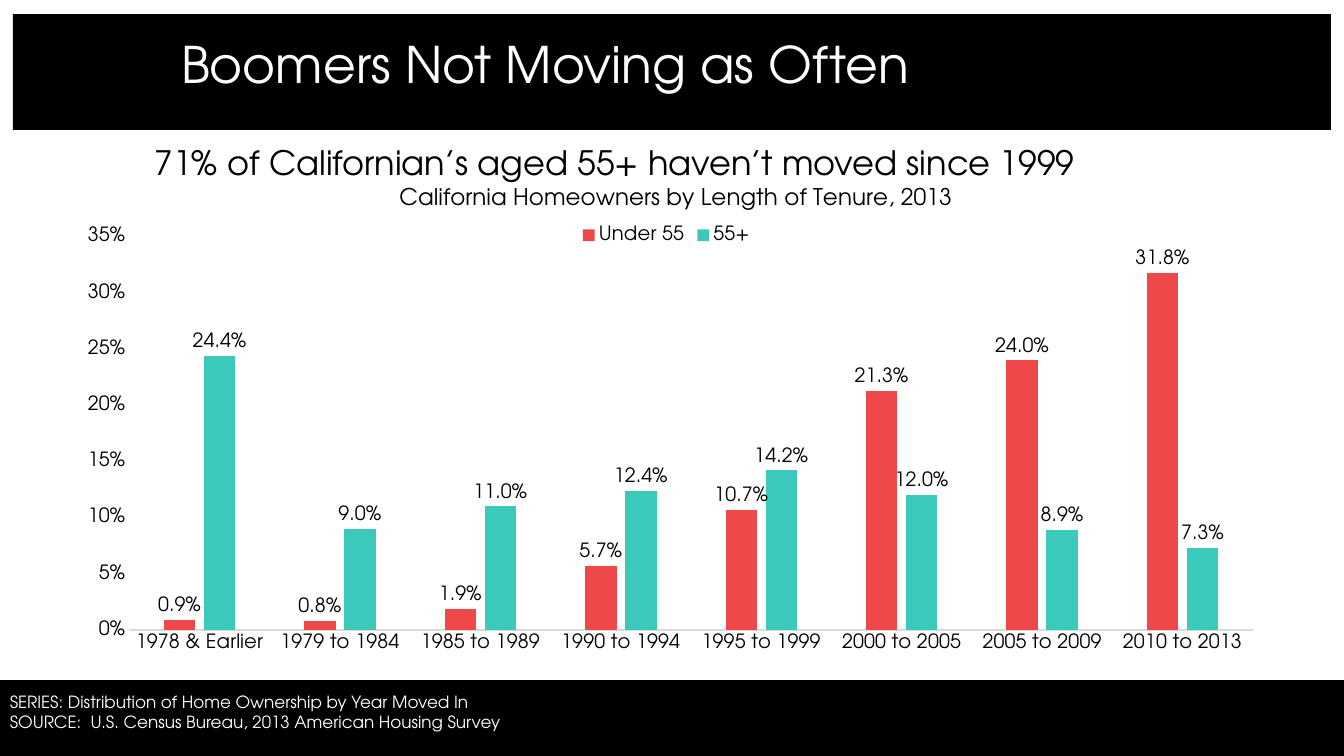
"""Build the slide on home-ownership tenure by age group."""
from lxml import etree
from pptx import Presentation
from pptx import util as u
from pptx.chart import data as chart_data
from pptx.dml import color
from pptx.enum import chart as ch
from pptx.enum import shapes, text
from pptx.oxml import ns

PX = 914400 / 100.8


def px(*lengths):
    return [u.Emu(round(length * PX)) for length in lengths]


def rgb(value):
    return color.RGBColor.from_string(value)


def apply(target, **values):
    for name, value in values.items():
        setattr(target, name, value)


def place(node, **fractions):
    for old in node.findall(ns.qn("c:layout")):
        node.remove(old)
    layout = etree.Element(ns.qn("c:layout"))
    manual = etree.SubElement(layout, ns.qn("c:manualLayout"))
    if "w" in fractions:
        etree.SubElement(manual, ns.qn("c:layoutTarget"), val="inner")
    for mode in ("xMode", "yMode"):
        etree.SubElement(manual, ns.qn(f"c:{mode}"), val="edge")
    for name, value in fractions.items():
        etree.SubElement(manual, ns.qn(f"c:{name}"), val=str(value))
    overlay = node.find(ns.qn("c:overlay"))
    if overlay is None:
        node.insert(0, layout)
    else:
        overlay.addprevious(layout)


class TenureSlide:
    face = "TeX Gyre Adventor"
    black, white, grey = "000000", "FFFFFF", "D9D9D9"

    def __init__(self, deck):
        self.page = deck.slides.add_slide(deck.slide_layouts[5])

    def style(self, font, size, shade):
        apply(font, name=self.face, size=u.Pt(size), bold=False)
        font.color.rgb = rgb(shade)

    def band(self, *bounds):
        bar = self.page.shapes.add_shape(shapes.MSO_SHAPE.RECTANGLE, *px(*bounds))
        bar.shadow.inherit = False
        bar.fill.solid()
        bar.fill.fore_color.rgb = rgb(self.black)
        bar.line.fill.background()

    def fill_text(self, box, lines, size, shade, frame_format, para_format):
        frame = box.text_frame
        frame.text = "\n".join(lines)
        apply(frame, **frame_format)
        for para in frame.paragraphs:
            apply(para, **para_format)
            for span in para.runs:
                self.style(span.font, size, shade)

    def title(self, words, bounds, size):
        box = self.page.shapes.title
        apply(box, **dict(zip(("left", "top", "width", "height"), px(*bounds))))
        box.element.getparent().append(box.element)
        self.fill_text(box, [words], size, self.white,
                       {"vertical_anchor": text.MSO_ANCHOR.MIDDLE,
                        "auto_size": text.MSO_AUTO_SIZE.NONE},
                       {"alignment": text.PP_ALIGN.LEFT, "line_spacing": 0.9})

    def textbox(self, lines, bounds, size, shade, frame_format, **para_format):
        box = self.page.shapes.add_textbox(*px(*bounds))
        self.fill_text(box, lines, size, shade, frame_format, para_format)

    def column_chart(self, heading, categories, series, bounds):
        data = chart_data.CategoryChartData(number_format="0.0%")
        data.categories = categories
        for name, _, values in series:
            data.add_series(name, values)
        chart = self.page.shapes.add_chart(
            ch.XL_CHART_TYPE.COLUMN_CLUSTERED, *px(*bounds), data).chart
        self.style(chart.font, 14, self.black)

        frame = chart.chart_title.text_frame
        frame.text = heading
        self.style(frame.paragraphs[0].runs[0].font, 16.4, self.black)
        chart.has_legend = True
        apply(chart.legend, position=ch.XL_LEGEND_POSITION.TOP, include_in_layout=True)
        self.style(chart.legend.font, 14, self.black)

        plot = chart.plots[0]
        apply(plot, gap_width=219, overlap=-27, vary_by_categories=False,
              has_data_labels=True)
        apply(plot.data_labels, show_value=True, number_format="0.0%",
              number_format_is_linked=False,
              position=ch.XL_LABEL_POSITION.OUTSIDE_END)
        self.style(plot.data_labels.font, 14, self.black)
        for columns, (_, shade, _) in zip(plot.series, series):
            columns.format.fill.solid()
            columns.format.fill.fore_color.rgb = rgb(shade)

        for axis in (chart.category_axis, chart.value_axis):
            apply(axis, has_major_gridlines=False,
                  major_tick_mark=ch.XL_TICK_MARK.NONE,
                  minor_tick_mark=ch.XL_TICK_MARK.NONE)
            self.style(axis.tick_labels.font, 14, self.black)
        chart.category_axis.format.line.color.rgb = rgb(self.grey)
        chart.category_axis.format.line.width = u.Pt(0.75)
        apply(chart.value_axis, minimum_scale=0, maximum_scale=0.35, major_unit=0.05)
        apply(chart.value_axis.tick_labels, number_format="0%",
              number_format_is_linked=False)
        chart.value_axis.format.line.fill.background()

        place(chart.chart_title.element, x=0.27, y=0.03)
        place(chart.element.find(".//" + ns.qn("c:legend")), x=0.42, y=0.11)
        place(chart.element.find(".//" + ns.qn("c:plotArea")),
              x=0.05, y=0.14, w=0.93, h=0.79)


def main():
    deck = Presentation()
    deck.slide_width, deck.slide_height = px(1344, 756)
    slide = TenureSlide(deck)
    slide.band(0, 680, 1344, 76)
    slide.band(13, 14, 1318, 116)
    periods = ["1978 & Earlier", "1979 to 1984", "1985 to 1989", "1990 to 1994",
               "1995 to 1999", "2000 to 2005", "2005 to 2009", "2010 to 2013"]
    groups = [
        ("Under 55", "EE484A", [0.009, 0.008, 0.019, 0.057, 0.107, 0.213, 0.24, 0.318]),
        ("55+", "3AC9BB", [0.244, 0.09, 0.11, 0.124, 0.142, 0.12, 0.089, 0.073]),
    ]
    slide.column_chart("California Homeowners by Length of Tenure, 2013",
                       periods, groups, (69, 167, 1208, 498))
    slide.title("Boomers Not Moving as Often", (171, 33, 1146, 68), 36)
    slide.textbox(["SERIES: Distribution of Home Ownership by Year Moved In",
                   "SOURCE:  U.S. Census Bureau, 2013 American Housing Survey"],
                  (0, 687, 519, 50), 12, slide.white,
                  {"word_wrap": False, "auto_size": text.MSO_AUTO_SIZE.SHAPE_TO_FIT_TEXT})
    slide.textbox(["71% of Californian’s aged 55+ haven’t moved since 1999"],
                  (69, 137, 1091, 543), 24, slide.black, {"word_wrap": True},
                  alignment=text.PP_ALIGN.CENTER)
    deck.save("out.pptx")


if __name__ == "__main__":
    main()
